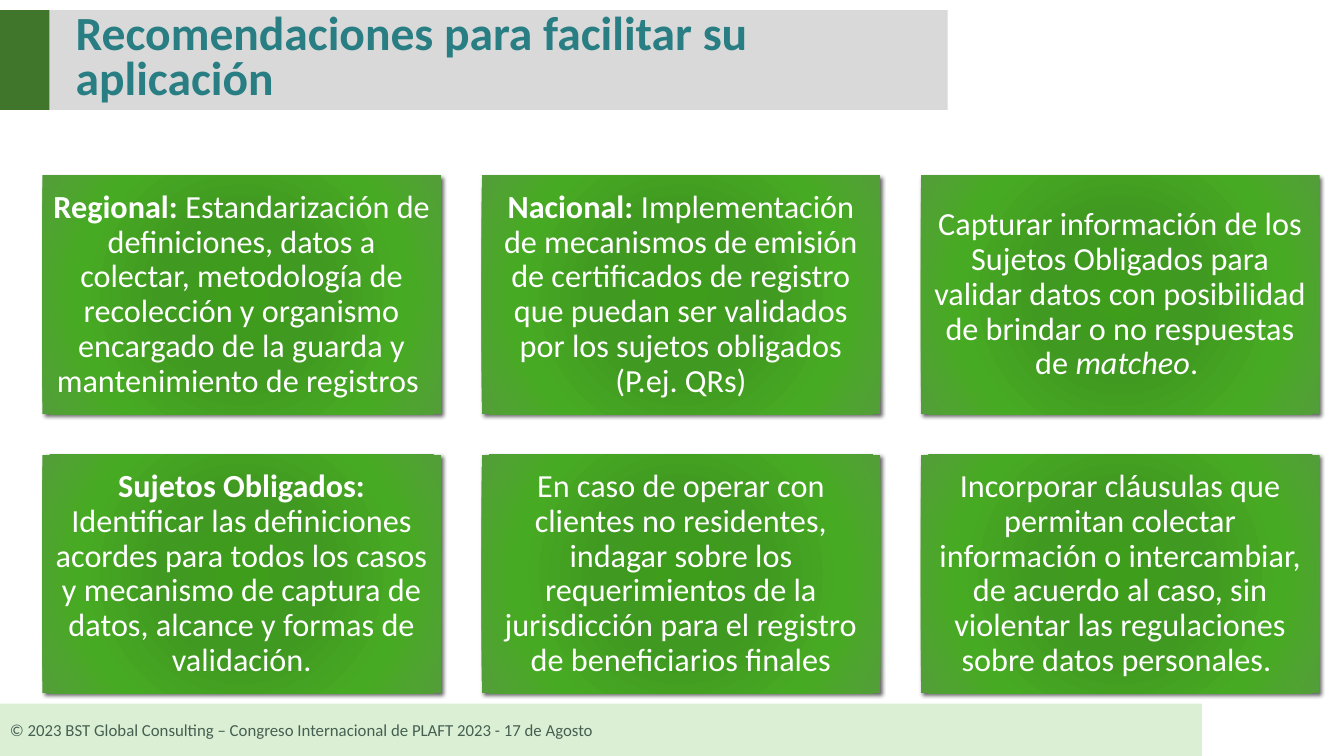
from pptx import Presentation
from pptx.dml.color import RGBColor
from pptx.enum.shapes import MSO_SHAPE
from pptx.enum.text import MSO_ANCHOR, MSO_AUTO_SIZE, PP_ALIGN
from pptx.oxml import parse_xml
from pptx.oxml.ns import nsdecls
from pptx.util import Inches, Pt

WIDTH, HEIGHT = 13.33, 7.5
FONT = "Calibri"
WHITE = RGBColor(0xFF, 0xFF, 0xFF)
GREY = RGBColor(0xD9, 0xD9, 0xD9)
GREEN = RGBColor(0x3F, 0x76, 0x2B)
PALE_GREEN = RGBColor(0xDB, 0xEF, 0xD4)
DARK_GREEN = RGBColor(0x45, 0x5F, 0x51)
TEAL = RGBColor(0x28, 0x7E, 0x83)
SHADOW = RGBColor(0, 0, 0)
CARD_STOPS = [
    (0, RGBColor(0x3E, 0x9D, 0x1B)),
    (34, RGBColor(0x40, 0x99, 0x20)),
    (70, RGBColor(0x47, 0xAA, 0x23)),
    (100, RGBColor(0x54, 0x9E, 0x39)),
]

TITLE = "Recomendaciones para facilitar su aplicación"
FOOTER = "© 2023 BST Global Consulting – Congreso Internacional de PLAFT 2023 - 17 de Agosto"
CARDS = [
    [("Regional: ", "b"),
     ("Estandarización de definiciones, datos a colectar, metodología de recolección "
      "y organismo encargado de la guarda y mantenimiento de registros ", "")],
    [("Nacional:", "b"),
     (" Implementación de mecanismos de emisión de certificados de registro que puedan "
      "ser validados por los sujetos obligados (P.ej. QRs)", "")],
    [("Capturar información de los Sujetos Obligados para validar datos con posibilidad "
      "de brindar o no respuestas de ", ""), ("matcheo", "i"), (". ", "")],
    [("Sujetos Obligados:", "b"),
     (" Identificar las definiciones acordes para todos los casos y mecanismo de captura "
      "de datos, alcance y formas de validación.", "")],
    [("En caso de operar con clientes no residentes, indagar sobre los requerimientos "
      "de la jurisdicción para el registro de beneficiarios finales", "")],
    [("Incorporar cláusulas que permitan colectar información o intercambiar, de acuerdo "
      "al caso, sin violentar las regulaciones sobre datos personales. ", "")],
]


def write(shape, runs, size, color, align=PP_ALIGN.LEFT, spacing=1.0, inset=0.05):
    """Write styled runs as the only paragraph of a shape."""
    tf = shape.text_frame
    tf.word_wrap = True
    tf.auto_size = MSO_AUTO_SIZE.NONE
    tf.vertical_anchor = MSO_ANCHOR.MIDDLE
    tf.margin_left = tf.margin_right = Inches(0.1)
    tf.margin_top = tf.margin_bottom = Inches(inset)
    p = tf.paragraphs[0]
    p.alignment, p.line_spacing = align, spacing
    p.space_before = Pt(0)
    for text, style in runs:
        r = p.add_run()
        r.text = text
        r.font.name, r.font.size = FONT, Pt(size)
        r.font.color.rgb = color
        r.font.bold, r.font.italic = style == "b", style == "i"


def add_rect(s, x, y, w, h, color=None):
    """Add a rectangle without line or shadow."""
    sp = s.shapes.add_shape(MSO_SHAPE.RECTANGLE, *map(Inches, (x, y, w, h)))
    sp.line.fill.background()
    sp.shadow.inherit = False
    if color is not None:
        sp.fill.solid()
        sp.fill.fore_color.rgb = color
    return sp


def add_heading(s, x, y, w, h):
    """Place the title over its grey band and green tab."""
    add_rect(s, x, y, w, h, GREY)
    add_rect(s, x, y, 0.49, h, GREEN)
    title = s.shapes.title
    title.left, title.top = Inches(x + 0.65), Inches(y - 0.05)
    title.width, title.height = Inches(w - 0.55), Inches(h + 0.09)
    write(title, [(TITLE, "b")], 34, TEAL, spacing=0.8)
    s.shapes.element.append(title.element)


def add_card(s, x, y, w, h, runs):
    """Add a card with a radial gradient and a soft shadow."""
    sp = add_rect(s, x, y, w, h)
    stops = "".join(f'<a:gs pos="{pos * 1000}"><a:srgbClr val="{color}"/></a:gs>'
                    for pos, color in CARD_STOPS)
    sp.element.spPr.insert(2, parse_xml(
        f'<a:gradFill {nsdecls("a")} rotWithShape="1"><a:gsLst>{stops}</a:gsLst>'
        '<a:path path="circle"><a:fillToRect l="100000" t="100000" r="100000" b="100000"/>'
        '</a:path></a:gradFill>'))
    sp.element.spPr.effectLst.append(parse_xml(
        f'<a:outerShdw {nsdecls("a")} blurRad="{Pt(3)}" dist="{Pt(2)}" dir="2700000" '
        f'rotWithShape="0"><a:srgbClr val="{SHADOW}"><a:alpha val="60000"/></a:srgbClr>'
        '</a:outerShdw>'))
    write(sp, runs, 23, WHITE, PP_ALIGN.CENTER, 0.9, 0.1)


def add_cards(s, x, y, w, h, columns=3, gap=0.4):
    """Lay the cards out on an even grid inside the box."""
    rows = len(CARDS) // columns
    card_w = (w - gap * (columns - 1)) / columns
    card_h = (h - gap * (rows - 1)) / rows
    for i, runs in enumerate(CARDS):
        row, col = divmod(i, columns)
        add_card(s, x + col * (card_w + gap), y + row * (card_h + gap), card_w, card_h, runs)


def add_footer(s, x, y, w, h):
    """Add the footer band with the copyright line."""
    write(add_rect(s, x, y, w, h, PALE_GREEN), [(FOOTER, "")], 12, DARK_GREEN)


def main():
    """Build and save the slide."""
    prs = Presentation()
    prs.slide_width, prs.slide_height = Inches(WIDTH), Inches(HEIGHT)
    s = prs.slides.add_slide(prs.slide_layouts[5])
    add_footer(s, 0, HEIGHT - 0.52, 11.92, 0.52)
    add_heading(s, 0, 0.1, 9.4, 0.99)
    add_cards(s, 0.42, 1.74, 12.67, 5.14)
    prs.save("out.pptx")


if __name__ == "__main__":
    main()
